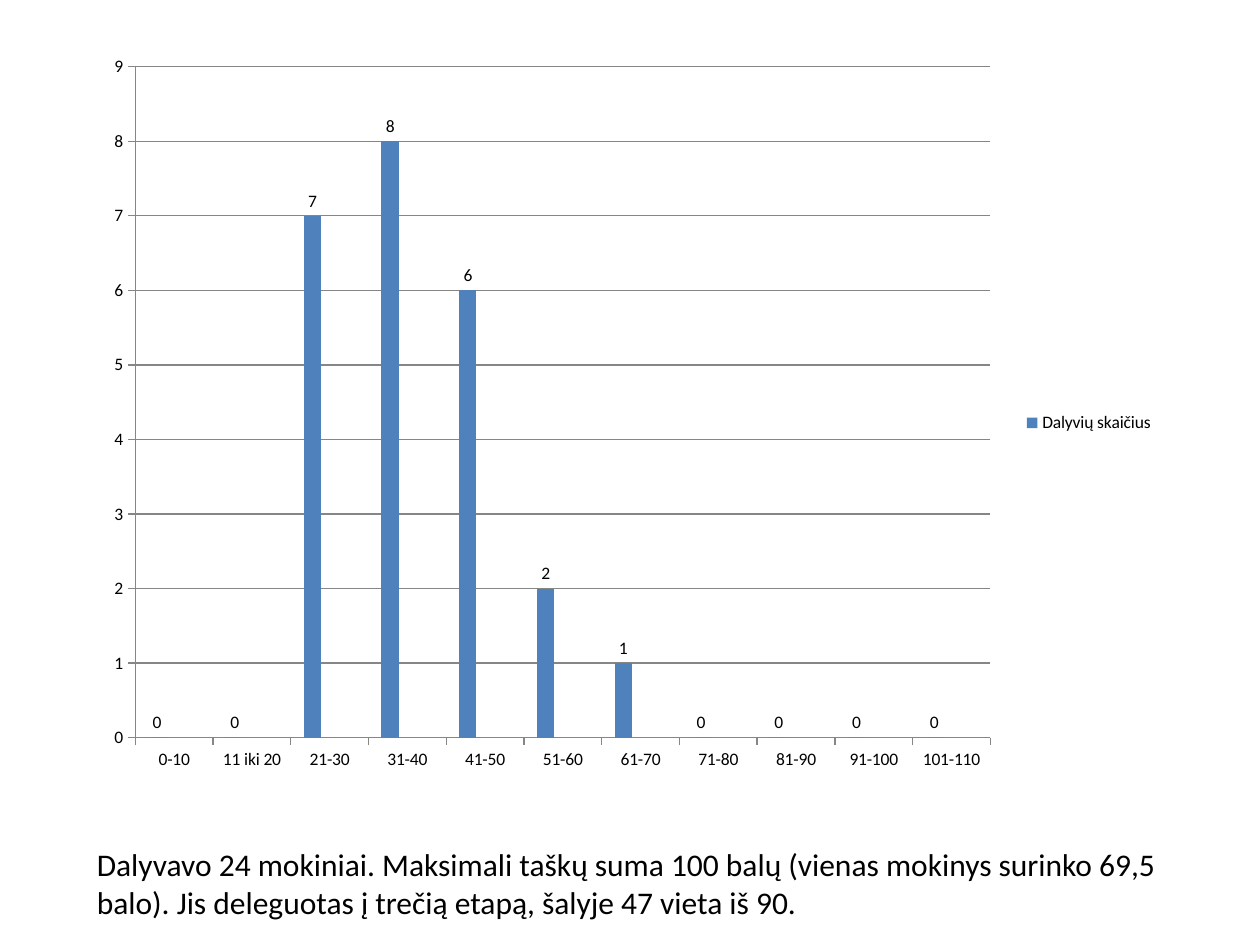
from lxml.etree import SubElement
from pptx import Presentation
from pptx.chart.data import CategoryChartData as ChartData
from pptx.dml.color import RGBColor
from pptx.enum.chart import XL_CHART_TYPE as ChartType
from pptx.enum.chart import XL_LABEL_POSITION as LabelPosition
from pptx.enum.chart import XL_LEGEND_POSITION as LegendPosition
from pptx.enum.chart import XL_TICK_MARK as TickMark
from pptx.oxml.ns import qn
from pptx.util import Inches, Pt

WIDTH, HEIGHT = Inches(10), Inches(7.5)
BLACK = RGBColor(0x00, 0x00, 0x00)
GREY = RGBColor(0x86, 0x86, 0x86)
BLUE = RGBColor(0x4F, 0x81, 0xBD)
RED = RGBColor(0xC0, 0x50, 0x4D)
GREEN = RGBColor(0x9B, 0xBB, 0x59)

CATEGORIES = ["0-10", "11 iki 20", "21-30", "31-40", "41-50", "51-60",
              "61-70", "71-80", "81-90", "91-100", "101-110"]
SERIES = [
    ("Dalyvių skaičius", [0, 0, 7, 8, 6, 2, 1, 0, 0, 0, 0], BLUE),
    ("Stulpelis1", [None] * len(CATEGORIES), RED),
    ("Stulpelis2", [None] * len(CATEGORIES), GREEN),
]
CAPTION = ("Dalyvavo 24 mokiniai. Maksimali taškų suma 100 balų (vienas mokinys "
           "surinko 69,5 balo). Jis deleguotas į trečią etapą, šalyje 47 vieta iš 90.")


def apply(target, **values):
    for name, value in values.items():
        setattr(target, name, value)


def area(left, top, width, height):
    return (int(left * WIDTH), int(top * HEIGHT),
            int(width * WIDTH), int(height * HEIGHT))


def format_font(font, size):
    apply(font, name="Calibri", size=Pt(size))
    font.color.rgb = BLACK


def format_line(line):
    line.width = Pt(0.75)
    line.color.rgb = GREY


def place_plot(chart, **shares):
    plot_area = chart.plots[0]._element.getparent()
    for old in plot_area.findall(qn("c:layout")):
        plot_area.remove(old)
    layout = SubElement(plot_area, qn("c:layout"))
    plot_area.insert(0, layout)
    manual = SubElement(layout, qn("c:manualLayout"))
    settings = {"layoutTarget": "inner", "xMode": "edge", "yMode": "edge", **shares}
    for name, value in settings.items():
        SubElement(manual, qn(f"c:{name}")).set("val", str(value))


def hide_legend_entry(legend, index):
    entry = SubElement(legend._element, qn("c:legendEntry"))
    SubElement(entry, qn("c:idx")).set("val", str(index))
    SubElement(entry, qn("c:delete")).set("val", "1")
    legend._element.insert(index, entry)


def format_axes(chart):
    for axis in (chart.category_axis, chart.value_axis):
        apply(axis, major_tick_mark=TickMark.OUTSIDE, minor_tick_mark=TickMark.NONE)
        format_line(axis.format.line)
    apply(chart.value_axis, minimum_scale=0, maximum_scale=9, major_unit=1,
          has_major_gridlines=True)
    format_line(chart.value_axis.major_gridlines.format.line)


def add_column_chart(page, place):
    data = ChartData()
    data.categories = CATEGORIES
    for name, values, _ in SERIES:
        data.add_series(name, values)
    chart = page.shapes.add_chart(ChartType.COLUMN_CLUSTERED, *place, data).chart
    apply(chart, has_title=False, has_legend=True)
    format_font(chart.font, 10)
    apply(chart.plots[0], gap_width=150, overlap=0, vary_by_categories=False)
    for series, (_, _, color) in zip(chart.series, SERIES):
        series.format.fill.solid()
        series.format.fill.fore_color.rgb = color
    labels = chart.series[0].data_labels
    apply(labels, show_value=True, position=LabelPosition.OUTSIDE_END)
    format_font(labels.font, 10)
    format_axes(chart)
    apply(chart.legend, position=LegendPosition.RIGHT, include_in_layout=False)
    for index in range(1, len(SERIES)):
        hide_legend_entry(chart.legend, index)
    place_plot(chart, x=0.029, y=0.015, w=0.805, h=0.914)


def add_caption(page, place, text):
    frame = page.shapes.add_textbox(*place).text_frame
    frame.word_wrap = True
    span = frame.paragraphs[0].add_run()
    span.text = text
    format_font(span.font, 18)


def main():
    deck = Presentation()
    apply(deck, slide_width=WIDTH, slide_height=HEIGHT)
    page = deck.slides.add_slide(deck.slide_layouts[6])
    add_column_chart(page, area(0.083, 0.059, 0.843, 0.777))
    add_caption(page, area(0.067, 0.888, 0.913, 0.135), CAPTION)
    deck.save("out.pptx")


if __name__ == "__main__":
    main()
